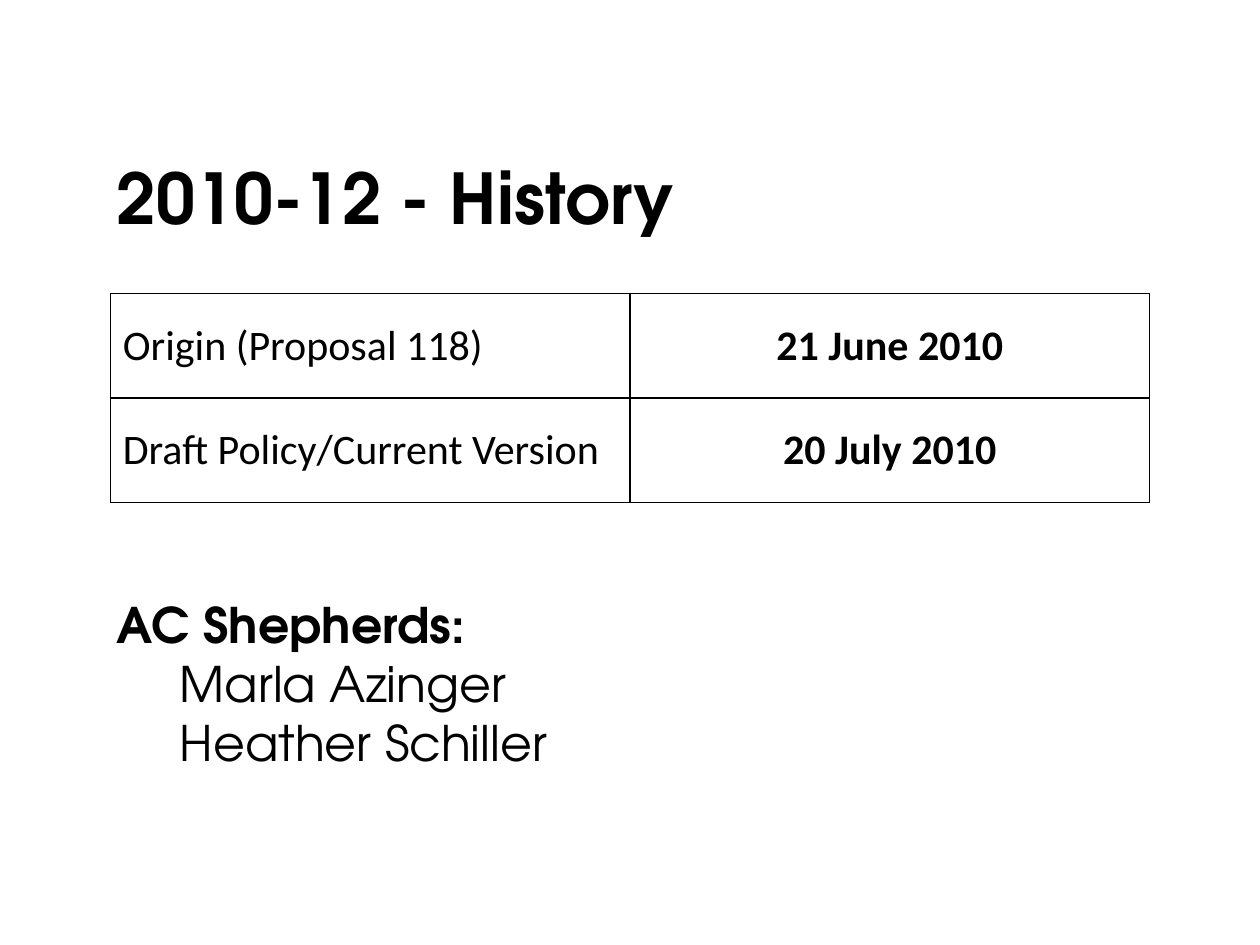
from dataclasses import dataclass

from lxml.etree import SubElement
from pptx import Presentation
from pptx.dml.color import RGBColor
from pptx.enum.text import MSO_ANCHOR as Anchor, PP_ALIGN as Align
from pptx.oxml.ns import qn
from pptx.util import Inches, Pt

WIDTH, HEIGHT = 10, 7.5
BLACK, WHITE = "000000", "FFFFFF"
HEADING_FONT, TABLE_FONT = "TeX Gyre Adventor", "Calibri"
COLUMN_WIDTH, ROW_HEIGHT = 4.125, 0.83
NAME_INDENT = 0.5


@dataclass
class Line:
    text: str
    bold: bool = False
    indent: float = 0


@dataclass
class Milestone:
    stage: str
    date: str


HISTORY = [
    Milestone("Origin (Proposal 118)", "21 June 2010"),
    Milestone("Draft Policy/Current Version", "20 July 2010"),
]
SHEPHERDS = [
    Line("AC Shepherds:", bold=True),
    Line("Marla Azinger", indent=NAME_INDENT),
    Line("Heather Schiller", indent=NAME_INDENT),
]


def color(value: str) -> RGBColor:
    return RGBColor.from_string(value)


def write_line(para, line: Line, font_name: str, size: float) -> None:
    para.text = line.text
    if line.indent:
        para._p.get_or_add_pPr().set("marL", str(Inches(line.indent)))
    for span in para.runs:
        span.font.name = font_name
        span.font.size = Pt(size)
        span.font.bold = line.bold
        span.font.color.rgb = color(BLACK)


def add_text(page, left: float, top: float, width: float, height: float,
             lines: list[Line], size: float, anchor=Anchor.TOP) -> None:
    box = page.shapes.add_textbox(Inches(left), Inches(top), Inches(width), Inches(height))
    frame = box.text_frame
    frame.word_wrap = True
    frame.vertical_anchor = anchor
    for index, line in enumerate(lines):
        para = frame.add_paragraph() if index else frame.paragraphs[0]
        write_line(para, line, HEADING_FONT, size)


def add_borders(cell) -> None:
    properties = cell._tc.get_or_add_tcPr()
    for side in ("a:lnL", "a:lnR", "a:lnT", "a:lnB"):
        border = SubElement(properties, qn(side), w=str(Pt(1)))
        fill = SubElement(border, qn("a:solidFill"))
        SubElement(fill, qn("a:srgbClr"), val=BLACK)


def fill_cell(cell, line: Line, align) -> None:
    para = cell.text_frame.paragraphs[0]
    write_line(para, line, TABLE_FONT, 24)
    para.alignment = align
    cell.vertical_anchor = Anchor.MIDDLE
    add_borders(cell)
    cell.fill.solid()
    cell.fill.fore_color.rgb = color(WHITE)


def add_history(page, milestones: list[Milestone]) -> None:
    rows, columns = len(milestones), 2
    width = columns * COLUMN_WIDTH
    table = page.shapes.add_table(
        rows, columns, Inches((WIDTH - width) / 2), Inches(2.33),
        Inches(width), Inches(rows * ROW_HEIGHT)).table
    table.first_row = table.horz_banding = False
    for row, milestone in enumerate(milestones):
        table.rows[row].height = Inches(ROW_HEIGHT)
        fill_cell(table.cell(row, 0), Line(milestone.stage), Align.LEFT)
        fill_cell(table.cell(row, 1), Line(milestone.date, bold=True), Align.CENTER)


def main() -> None:
    deck = Presentation()
    deck.slide_width, deck.slide_height = Inches(WIDTH), Inches(HEIGHT)
    page = deck.slides.add_slide(deck.slide_layouts[6])
    add_history(page, HISTORY)
    add_text(page, 0.83, 4.67, 4.08, 1.51, SHEPHERDS, 28)
    add_text(page, 0.83, 1.17, 9, 0.78, [Line("2010-12 - History", bold=True)], 40, Anchor.MIDDLE)
    deck.save("out.pptx")


if __name__ == "__main__":
    main()
